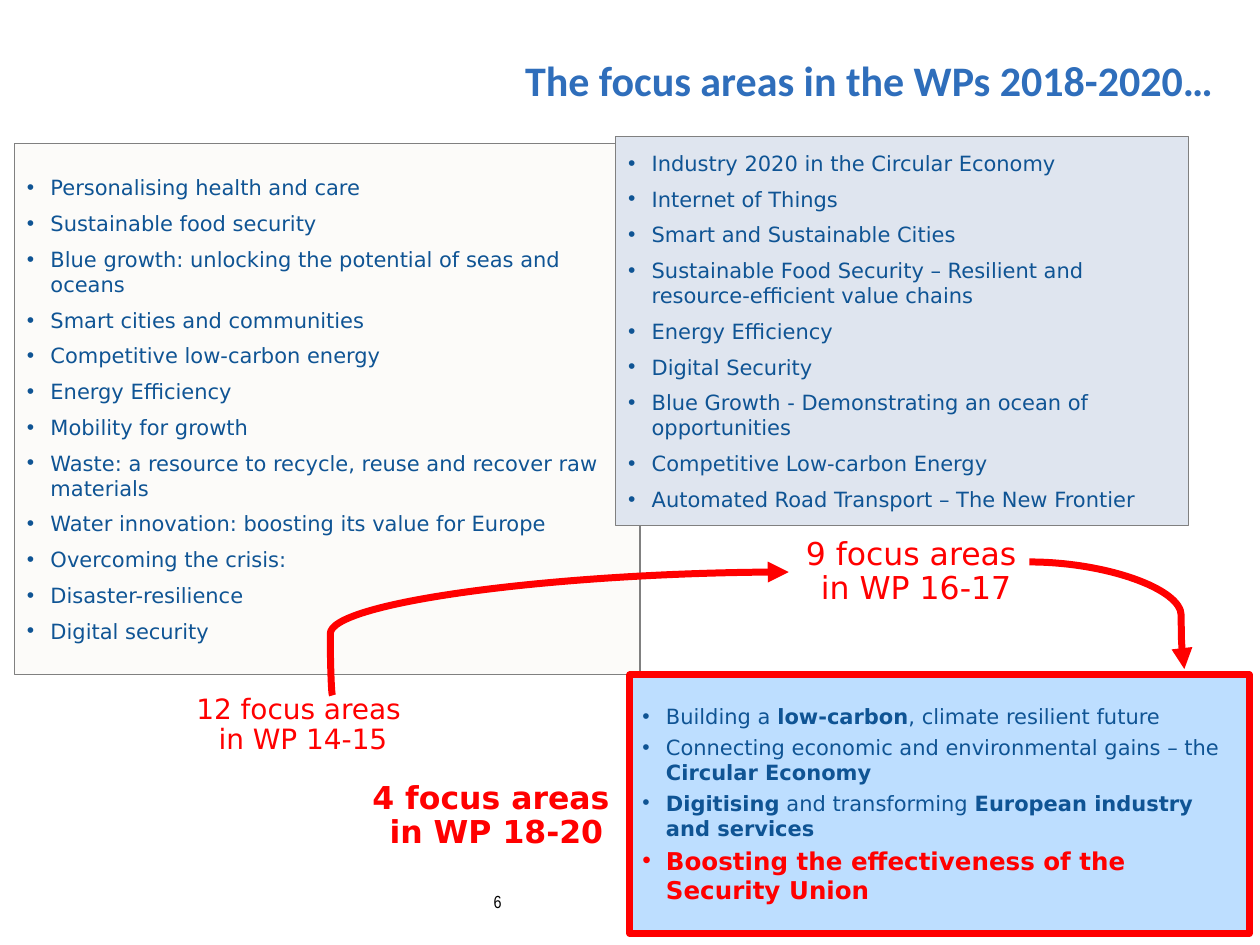
from lxml import etree
from pptx import Presentation, util as u
from pptx.dml.color import RGBColor
from pptx.enum import shapes, text
from pptx.oxml import ns

Pt = u.Pt
COLORS = {
    "title": "2F6EBB", "body": "0F5494", "accent": "FF0000", "number": "000000",
    "border": "808080", "wp14": "FCFBF9", "wp16": "DFE5EF", "wp18": "BDDEFF",
}
BODY_FONT = "DejaVu Sans"
INDENT = 13.5

WP14_AREAS = [
    "Personalising health and care",
    "Sustainable food security",
    "Blue growth: unlocking the potential of seas and oceans",
    "Smart cities and communities",
    "Competitive low-carbon energy",
    "Energy Efficiency",
    "Mobility for growth",
    "Waste: a resource to recycle, reuse and recover raw materials",
    "Water innovation: boosting its value for Europe",
    "Overcoming the crisis:",
    "Disaster-resilience",
    "Digital security",
]
WP16_AREAS = [
    "Industry 2020 in the Circular Economy",
    "Internet of Things",
    "Smart and Sustainable Cities",
    "Sustainable Food Security – Resilient and resource-efficient value chains",
    "Energy Efficiency",
    "Digital Security",
    "Blue Growth - Demonstrating an ocean of opportunities",
    "Competitive Low-carbon Energy",
    "Automated Road Transport – The New Frontier",
]
# Each area is a list of (words, format changes)
BOLD = {"bold": True}
WP18_AREAS = [
    [("Building a ", {}), ("low-carbon", BOLD), (", climate resilient future", {})],
    [("Connecting economic and environmental gains – the ", {}),
     ("Circular Economy", BOLD)],
    [("Digitising", BOLD), (" and transforming ", {}),
     ("European industry and services", BOLD)],
    [("Boosting the effectiveness of the Security Union",
      {"bold": True, "size": 14, "color": "accent"})],
]


def rgb(name):
    return RGBColor.from_string(COLORS[name])


def set_format(target, values):
    for name, value in values.items():
        setattr(target, name, value)


def add_run(paragraph, words, size=12, color="body", bold=False, name=BODY_FONT):
    run = paragraph.add_run()
    run.text = words
    set_format(run.font, {"size": Pt(size), "bold": bold, "name": name})
    run.font.color.rgb = rgb(color)


def set_line(line, color, width):
    line.color.rgb = rgb(color)
    line.width = Pt(width)


def add_bullet(paragraph):
    props = paragraph._p.get_or_add_pPr()
    props.set("marL", str(Pt(INDENT)))
    props.set("indent", str(-Pt(INDENT)))
    etree.SubElement(props, ns.qn("a:buFont")).set("typeface", "Arial")
    etree.SubElement(props, ns.qn("a:buChar")).set("char", "•")


def add_panel(slide, place, fill, border, areas, before):
    """Box with a bulleted list of focus areas."""
    panel = slide.shapes.add_shape(shapes.MSO_SHAPE.RECTANGLE, *map(Pt, place))
    panel.shadow.inherit = False
    panel.fill.solid()
    panel.fill.fore_color.rgb = rgb(fill)
    set_line(panel.line, *border)
    frame = panel.text_frame
    set_format(frame, {"word_wrap": True, "vertical_anchor": text.MSO_ANCHOR.MIDDLE})
    for index, area in enumerate(areas):
        paragraph = frame.add_paragraph() if index else frame.paragraphs[0]
        add_bullet(paragraph)
        set_format(paragraph, {
            "alignment": text.PP_ALIGN.LEFT,
            "space_before": Pt(before if index else 0),
            "space_after": Pt(3),
        })
        for words, changes in [(area, {})] if isinstance(area, str) else area:
            add_run(paragraph, words, **changes)


def add_caption(slide, place, lines, size, bold=False):
    """Red two-line count of focus areas."""
    frame = slide.shapes.add_textbox(*map(Pt, place)).text_frame
    set_format(frame, {
        "margin_left": 0, "margin_right": 0, "margin_top": 0, "margin_bottom": 0,
        "word_wrap": False, "vertical_anchor": text.MSO_ANCHOR.MIDDLE,
        "auto_size": text.MSO_AUTO_SIZE.SHAPE_TO_FIT_TEXT,
    })
    paragraph = frame.paragraphs[0]
    set_format(paragraph, {"alignment": text.PP_ALIGN.CENTER, "line_spacing": 0.9})
    for index, words in enumerate(lines):
        if index:
            paragraph.add_line_break()
        add_run(paragraph, words, size, "accent", bold)


def add_arrow(slide, ends, bend):
    """Curved arrow; bend is where it turns, as a share of its width."""
    arrow = slide.shapes.add_connector(shapes.MSO_CONNECTOR.CURVE, *map(Pt, ends))
    set_line(arrow.line, "accent", 4)
    props = arrow._element.spPr
    guide = etree.SubElement(props.find(".//" + ns.qn("a:avLst")), ns.qn("a:gd"))
    guide.set("name", "adj1")
    guide.set("fmla", f"val {round(bend * 100000)}")
    etree.SubElement(arrow.line._get_or_add_ln(), ns.qn("a:tailEnd")).set("type", "triangle")
    etree.SubElement(props, ns.qn("a:effectLst"))


def add_title(slide, place, words):
    title = slide.shapes.title
    set_format(title, dict(zip(("left", "top", "width", "height"), map(Pt, place))))
    set_format(title.text_frame, {
        "word_wrap": True, "vertical_anchor": text.MSO_ANCHOR.MIDDLE,
        "auto_size": text.MSO_AUTO_SIZE.NONE,
    })
    paragraph = title.text_frame.paragraphs[0]
    paragraph.alignment = text.PP_ALIGN.RIGHT
    add_run(paragraph, words, 24, "title", True, "Calibri")


def add_page_number(slide, place, number):
    frame = slide.shapes.add_textbox(*map(Pt, place)).text_frame
    frame.word_wrap = False
    add_run(frame.paragraphs[0], number, 10, "number", name="Arial Narrow")


def main():
    deck = Presentation()
    set_format(deck, {"slide_width": Pt(720), "slide_height": Pt(540)})
    slide = deck.slides.add_slide(deck.slide_layouts[5])

    # Heading and page number
    add_page_number(slide, (275, 505.5, 29, 19.5), "6")
    add_title(slide, (78.5, 12.2, 622, 66.2), "The focus areas in the WPs 2018-2020…")

    # Focus areas of each work programme
    thin = ("border", 0.75)
    add_caption(slide, (110.9, 397.4, 124.6, 34.6), ("12 focus areas ", "in WP 14-15"), 16)
    add_panel(slide, (8.3, 82, 357.5, 303.5), "wp14", thin, WP14_AREAS, 3)
    add_panel(slide, (351.8, 78, 327.5, 222.2), "wp16", thin, WP16_AREAS, 3)
    add_caption(slide, (212.4, 446.4, 142.6, 39.6), ("4 focus areas ", "in WP 18-20"), 18, True)
    add_caption(slide, (459.4, 307.4, 128.2, 39.6), ("9 focus areas ", "in WP 16-17"), 18)
    add_panel(slide, (360, 385.7, 354, 147.8), "wp18", ("accent", 4), WP18_AREAS, 0)

    # Arrows from one programme to the next
    add_arrow(slide, (190, 397.4, 450.7, 326.9), -0.005)
    add_arrow(slide, (588.2, 321.1, 676.8, 382.3), 0.98)

    deck.save("out.pptx")


if __name__ == "__main__":
    main()
